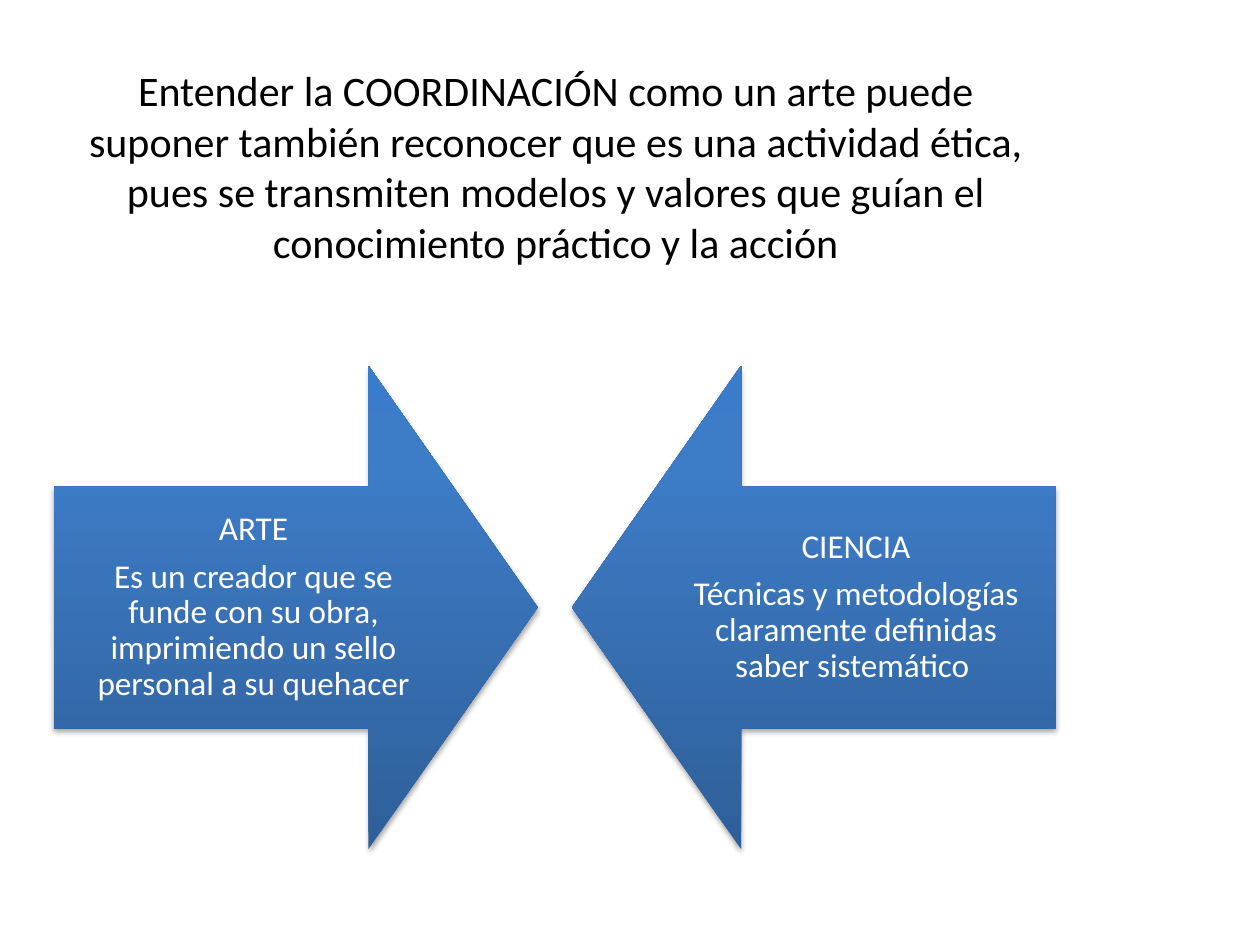
from copy import deepcopy

from lxml.etree import SubElement
from pptx import Presentation
from pptx.dml.color import RGBColor
from pptx.enum.shapes import MSO_SHAPE as Shape
from pptx.enum.text import MSO_ANCHOR as Anchor, MSO_AUTO_SIZE as AutoSize, PP_ALIGN as Align
from pptx.oxml.ns import qn
from pptx.util import Cm, Pt

TITLE = (
    "Entender la COORDINACIÓN como un arte puede suponer también reconocer que es una "
    "actividad ética, pues se transmiten modelos y valores que guían el conocimiento "
    "práctico y la acción"
)
ARROWS = [
    (Shape.RIGHT_ARROW, ["ARTE", "Es un creador que se funde con su obra, "
                         "imprimiendo un sello personal a su quehacer"]),
    (Shape.LEFT_ARROW, ["CIENCIA", "Técnicas y metodologías claramente definidas "
                        "saber sistemático "]),
]
GRADIENT = [(0, "2F5F99"), (0.8, "3D7CC7"), (1, "3A7CCB")]
FONT = "Calibri"
ARROW_LEFT, ARROW_TOP, ARROW_SIZE, ARROW_GAP = 1.09, 7.37, 9.75, 0.69


def color(hex_value):
    return RGBColor.from_string(hex_value)


def add_text(paragraph, text, size, hex_value):
    paragraph.alignment = Align.CENTER
    run = paragraph.add_run()
    run.text = text
    run.font.name = FONT
    run.font.size = Pt(size)
    run.font.color.rgb = color(hex_value)


def fill_gradient(shape):
    shape.fill.gradient()
    shape.fill.gradient_angle = 90
    stop_list = shape._element.spPr.find(".//" + qn("a:gsLst"))
    stop_list.append(deepcopy(stop_list[-1]))
    for stop, (position, hex_value) in zip(shape.fill.gradient_stops, GRADIENT):
        stop.position = position
        stop.color.rgb = color(hex_value)


def add_shadow(shape):
    shape.shadow.inherit = False
    effects = shape._element.spPr.find(qn("a:effectLst"))
    shadow = SubElement(effects, qn("a:outerShdw"), blurRad=str(Pt(3.1)),
                        dist=str(Pt(1.8)), dir="5400000", rotWithShape="0")
    shade = SubElement(shadow, qn("a:srgbClr"), val="000000")
    SubElement(shade, qn("a:alpha"), val="35000")


def add_title(slide):
    title = slide.shapes.title
    title.left, title.top, title.width, title.height = Cm(1.17), Cm(1.75), Cm(20.07), Cm(3.18)
    frame = title.text_frame
    frame.auto_size = AutoSize.NONE
    frame.vertical_anchor = Anchor.MIDDLE
    add_text(frame.paragraphs[0], TITLE, 24, "000000")


def add_arrow(slide, index, kind, lines):
    left = ARROW_LEFT + index * (ARROW_SIZE + ARROW_GAP)
    arrow = slide.shapes.add_shape(kind, Cm(left), Cm(ARROW_TOP), Cm(ARROW_SIZE), Cm(ARROW_SIZE))
    arrow.adjustments[0], arrow.adjustments[1] = 0.5, 0.35
    fill_gradient(arrow)
    arrow.line.fill.background()
    add_shadow(arrow)
    frame = arrow.text_frame
    frame.word_wrap = True
    frame.vertical_anchor = Anchor.MIDDLE
    frame.margin_left = frame.margin_right = frame.margin_top = frame.margin_bottom = Cm(0.38)
    for number, line in enumerate(lines):
        paragraph = frame.add_paragraph() if number else frame.paragraphs[0]
        paragraph.line_spacing = 0.9
        paragraph.space_after = Pt(6.65)
        add_text(paragraph, line, 19, "FFFFFF")


def main():
    """Build the slide with its title and two facing arrows."""
    presentation = Presentation()
    presentation.slide_width, presentation.slide_height = Cm(25.4), Cm(19.05)
    slide = presentation.slides.add_slide(presentation.slide_layouts[5])
    add_title(slide)
    for index, (kind, lines) in enumerate(ARROWS):
        add_arrow(slide, index, kind, lines)
    presentation.save("out.pptx")


if __name__ == "__main__":
    main()
